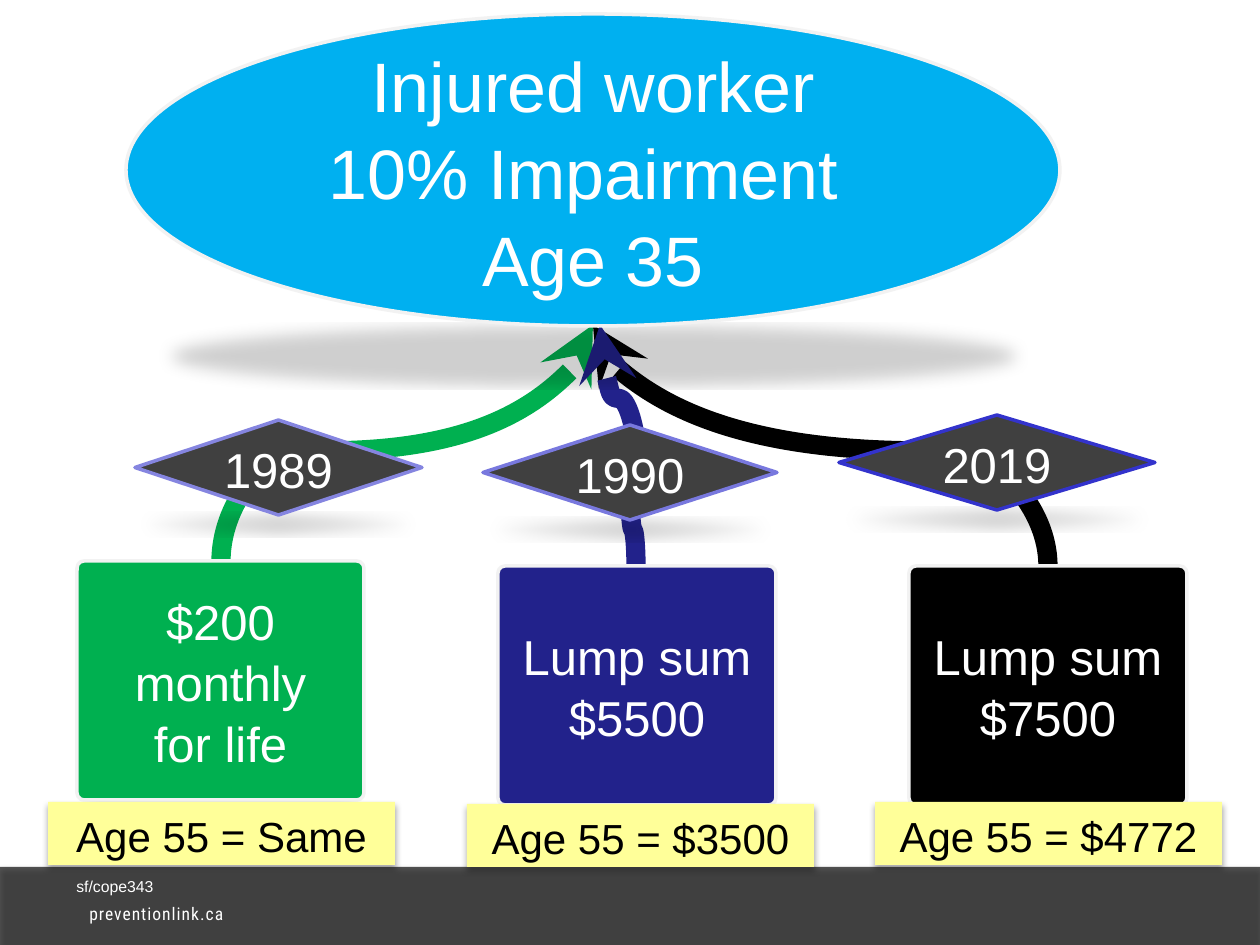
from lxml import etree
from pptx import Presentation
from pptx.dml.color import RGBColor
from pptx.enum.shapes import MSO_CONNECTOR, MSO_SHAPE
from pptx.enum.text import MSO_ANCHOR, PP_ALIGN
from pptx.oxml.ns import qn
from pptx.util import Emu, Pt

CURVE = MSO_CONNECTOR.CURVE
RECT, ROUND = MSO_SHAPE.RECTANGLE, MSO_SHAPE.ROUNDED_RECTANGLE
DIAMOND, OVAL = MSO_SHAPE.FLOWCHART_DECISION, MSO_SHAPE.OVAL
MIDDLE, TOP = MSO_ANCHOR.MIDDLE, MSO_ANCHOR.TOP
CENTER, LEFT = PP_ALIGN.CENTER, PP_ALIGN.LEFT

PX = 914400 // 126
BLACK = RGBColor(0x00, 0x00, 0x00)
WHITE = RGBColor(0xFF, 0xFF, 0xFF)
GREEN = RGBColor(0x00, 0xB0, 0x50)
NAVY = RGBColor(0x22, 0x22, 0x8B)
SKY = RGBColor(0x00, 0xB0, 0xF0)
GREY = RGBColor(0x40, 0x40, 0x40)
PALE = RGBColor(0xF2, 0xF2, 0xF2)
YELLOW = RGBColor(0xFF, 0xFF, 0x99)
LILAC = RGBColor(0x85, 0x85, 0xE0)
VIOLET = RGBColor(0x78, 0x78, 0xDE)
BLUE = RGBColor(0x33, 0x33, 0xCC)

# Shadows: opacity in percent, blur and distance in points, extra attributes
FLOOR = (18, 9, 0, {"sx": "90000", "sy": "-19000", "algn": "b"})
NOTE = (32, 3.5, 2.2, {"algn": "t"})
BAR = (35, 3.1, 1.8, {"algn": "t"})


def px(*values):
    return [Emu(v * PX) for v in values]


def add_shadow(sp, opacity, blur, dist, extra):
    effects = etree.SubElement(sp._element.spPr, qn("a:effectLst"))
    shadow = etree.SubElement(effects, qn("a:outerShdw"), blurRad=str(Pt(blur)),
                              dist=str(Pt(dist)), dir="5400000", rotWithShape="0", **extra)
    color = etree.SubElement(shadow, qn("a:srgbClr"), val=str(BLACK))
    etree.SubElement(color, qn("a:alpha"), val=str(opacity * 1000))


def write(sp, text, size, color=WHITE, font="Arial", align=CENTER, anchor=TOP,
          inset=None, spacing=None, tracking=None):
    tf = sp.text_frame
    tf.word_wrap = True
    tf.vertical_anchor = anchor
    if inset:
        tf.margin_left = tf.margin_right = px(inset[0])[0]
        tf.margin_top = tf.margin_bottom = px(inset[1])[0]
    for i, line in enumerate(text.split("\n")):
        p = tf.paragraphs[0] if i == 0 else tf.add_paragraph()
        p.alignment = align
        if spacing:
            p.line_spacing = spacing
        r = p.add_run()
        r.text = line
        r.font.size = Pt(size)
        r.font.name = font
        r.font.color.rgb = color
        if tracking:
            r._r.get_or_add_rPr().set("spc", str(tracking))


def add_block(s, kind, box, fill, shadow, line=None, corner=None):
    sp = s.shapes.add_shape(kind, *px(*box))
    if corner is not None:
        sp.adjustments[0] = corner
    sp.fill.solid()
    sp.fill.fore_color.rgb = fill
    if line is None:
        sp.line.fill.background()
    else:
        sp.line.color.rgb = line
        sp.line.width = Pt(2)
    add_shadow(sp, *shadow)
    return sp


def add_node(s, kind, box, fill, line, text, size=28, corner=None):
    sp = add_block(s, kind, box, fill, FLOOR, line, corner)
    write(sp, text, size, anchor=MIDDLE, inset=(16, 9), spacing=1.04)


def add_label(s, box, text, size, **fmt):
    tb = s.shapes.add_textbox(*px(*box))
    write(tb, text, size, align=LEFT, **fmt)


def add_curve(s, start, end, color, bends=1, rising=False, arrow=False):
    """Curve that leaves its start sideways, or upwards if rising."""
    (x0, y0), (x1, y1) = start, end
    cn = s.shapes.add_connector(CURVE, *px(x0, y0, x1, y1))
    if rising:  # a quarter turn swaps the sides of the box about its centre
        w, h = abs(y1 - y0), abs(x1 - x0)
        cn.left, cn.top = px((x0 + x1 - w) / 2, (y0 + y1 - h) / 2)
        cn.width, cn.height = px(w, h)
        xfrm = cn._element.spPr.find(qn("a:xfrm"))
        xfrm.set("rot", "16200000")
        xfrm.set("flipH", "0")
        xfrm.set("flipV", str(int(x1 < x0)))
    if bends == 1:
        cn._element.spPr.find(qn("a:prstGeom")).set("prst", "curvedConnector2")
    cn.line.color.rgb = color
    cn.line.width = Pt(11)
    if arrow:
        etree.SubElement(cn.line._get_or_add_ln(), qn("a:tailEnd"), type="stealth")
    etree.SubElement(cn._element.spPr, qn("a:effectLst"))


def main():
    prs = Presentation()
    prs.slide_width, prs.slide_height = px(1260, 945)
    s = prs.slides.add_slide(prs.slide_layouts[6])

    # Footer bar
    bar = add_block(s, RECT, (0, 867, 1260, 78), BLACK, BAR)
    color = bar._element.spPr.find(qn("a:solidFill"))[0]
    etree.SubElement(color, qn("a:alpha"), val="67000")
    add_label(s, (77, 897, 188, 34), "preventionlink.ca", 10,
              font="Roboto Condensed", tracking=60)

    # Curves from each payment through its year to the worker
    worker = (593, 325)
    add_curve(s, (325, 451), worker, GREEN, arrow=True)
    add_curve(s, (221, 561), (305, 451), GREEN, rising=True)
    add_node(s, DIAMOND, (135, 420, 287, 95), GREY, LILAC, "1989")
    add_curve(s, (924, 451), worker, BLACK, arrow=True)
    add_curve(s, (1048, 566), (945, 451), BLACK, rising=True)
    add_curve(s, (638, 472), (600, 325), NAVY, bends=2, rising=True, arrow=True)
    add_curve(s, (636, 566), (630, 494), NAVY, bends=2, rising=True)
    add_node(s, DIAMOND, (839, 415, 316, 95), GREY, BLUE, "2019")
    add_node(s, DIAMOND, (483, 425, 294, 95), GREY, VIOLET, "1990")

    # Payments
    for box, fill, text, corner in (
            ((77, 561, 287, 239), GREEN, "$200 monthly\nfor life", 0.03),
            ((498, 566, 278, 239), NAVY, "Lump sum\n$5500", 0.03),
            ((909, 566, 278, 239), BLACK, "Lump sum\n$7500", 0.03)):
        add_node(s, ROUND, box, fill, PALE, text, corner=corner)

    # Worker
    add_node(s, OVAL, (126, 14, 934, 312), SKY, PALE,
             "Injured worker\n10% Impairment \nAge 35", size=40)

    # Values at age 55
    for x, y, value in ((48, 802, "Same"), (467, 804, "$3500"), (875, 802, "$4772")):
        note = add_block(s, RECT, (x, y, 347, 63), YELLOW, NOTE)
        write(note, f"Age 55 = {value}", 24, color=BLACK, spacing=1.04)

    add_label(s, (64, 871, 238, 31), "sf/cope343", 9)
    prs.save("out.pptx")


if __name__ == "__main__":
    main()
